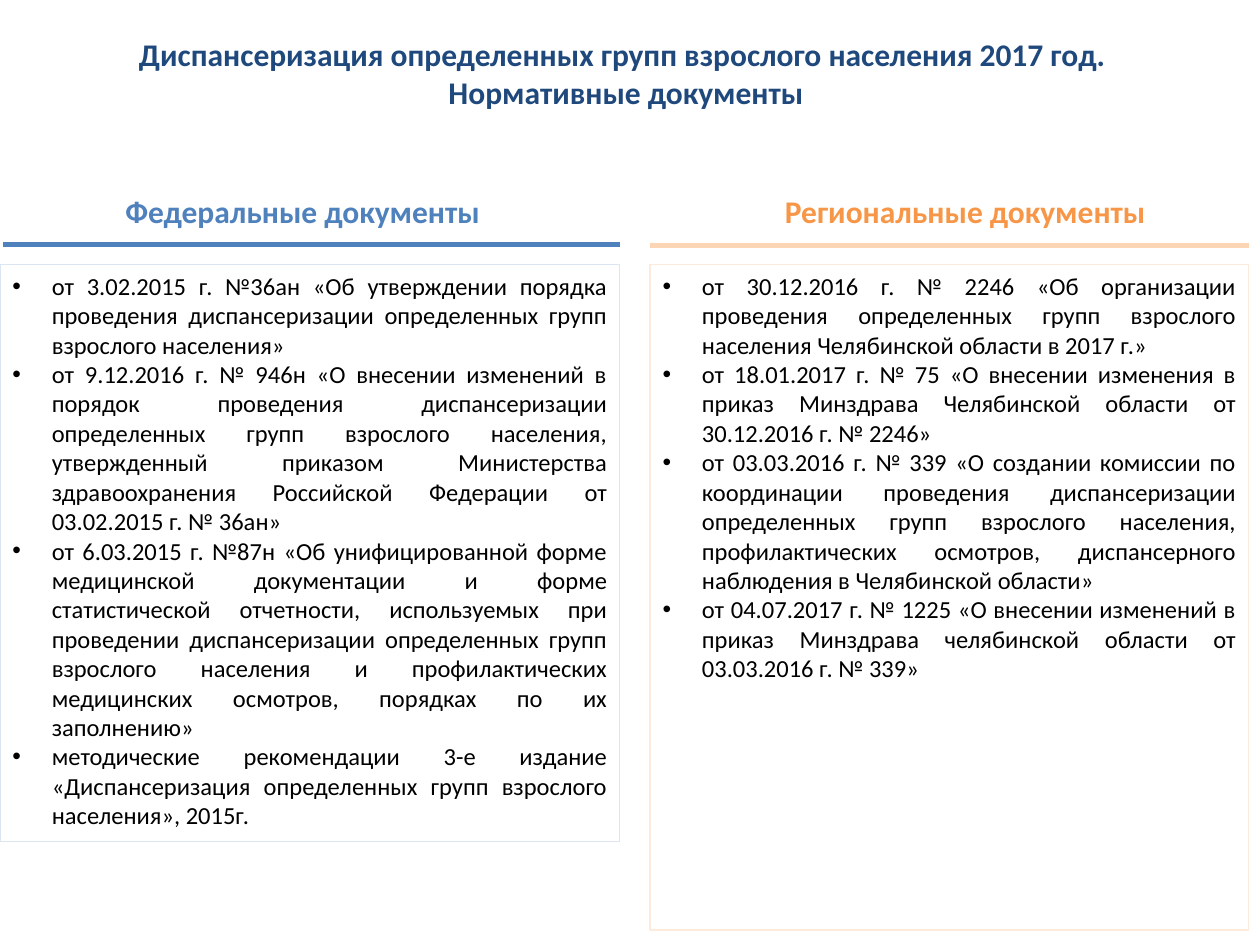
"""Build the slide on the legal documents for adult health check-ups."""
from lxml.etree import SubElement
from pptx import Presentation
from pptx.dml.color import RGBColor
from pptx.enum.shapes import MSO_CONNECTOR as Line, MSO_SHAPE as Shape
from pptx.enum.text import MSO_ANCHOR as Anchor, MSO_AUTO_SIZE as Fit, PP_ALIGN as Align
from pptx.oxml.ns import qn
from pptx.util import Pt

NAVY = RGBColor(0x1F, 0x49, 0x7D)
BLUE = RGBColor(0x4F, 0x81, 0xBD)
PALE_BLUE = RGBColor(0xDC, 0xE6, 0xF2)
ORANGE = RGBColor(0xF7, 0x96, 0x46)
PEACH = RGBColor(0xFC, 0xD5, 0xB5)
PALE_PEACH = RGBColor(0xFD, 0xEA, 0xDA)
BLACK = RGBColor(0, 0, 0)

TITLE = [
    "Диспансеризация определенных групп взрослого населения 2017 год. ",
    "Нормативные документы",
]
COLUMNS = [
    {
        "head": "Федеральные документы", "color": BLUE, "rule": BLUE, "edge": PALE_BLUE,
        "head_x": 62, "rule_x": 2, "rule_y": 139.7, "left": 0, "right": 354.2, "high": 329.8,
        "items": [
            "от 3.02.2015 г. №36ан «Об утверждении порядка проведения диспансеризации "
            "определенных групп взрослого населения»",
            "от 9.12.2016 г. № 946н «О внесении изменений в порядок проведения "
            "диспансеризации определенных групп взрослого населения, утвержденный приказом "
            "Министерства здравоохранения Российской Федерации от 03.02.2015 г. № 36ан»",
            "от 6.03.2015 г. №87н «Об унифицированной форме медицинской документации и "
            "форме статистической отчетности, используемых при проведении диспансеризации "
            "определенных групп взрослого населения и профилактических медицинских "
            "осмотров, порядках по их заполнению»",
            "методические рекомендации 3-е издание «Диспансеризация определенных групп "
            "взрослого населения», 2015г.",
        ],
    },
    {
        "head": "Региональные документы", "color": ORANGE, "rule": PEACH, "edge": PALE_PEACH,
        "head_x": 440.6, "rule_x": 371.5, "rule_y": 140.4, "left": 371.5, "right": 713.5,
        "high": 380.2,
        "items": [
            "от 30.12.2016 г. № 2246 «Об организации проведения определенных групп "
            "взрослого населения Челябинской области в 2017 г.»",
            "от 18.01.2017 г. № 75 «О внесении изменения в приказ Минздрава Челябинской "
            "области от 30.12.2016 г. № 2246»",
            "от 03.03.2016 г. № 339 «О создании комиссии по координации проведения "
            "диспансеризации определенных групп взрослого населения, профилактических "
            "осмотров, диспансерного наблюдения в Челябинской области»",
            "от 04.07.2017 г. № 1225 «О внесении изменений в приказ Минздрава челябинской "
            "области от 03.03.2016 г. № 339»",
        ],
    },
]
BOX_TOP = 151.2
INDENT = 22.5


def write(frame, lines, size, color, bold, align):
    frame.word_wrap = True
    frame.vertical_anchor = Anchor.TOP
    for i, line in enumerate(lines):
        para = frame.paragraphs[0] if i == 0 else frame.add_paragraph()
        para.alignment = align
        run = para.add_run()
        run.text = line
        font = run.font
        font.name, font.size, font.bold = "Calibri", Pt(size), bold
        font.color.rgb = color


def add_head(slide, lines, color, x, y, wide, high):
    box = slide.shapes.add_textbox(Pt(x), Pt(y), Pt(wide), Pt(high))
    write(box.text_frame, lines, 18, color, True, Align.CENTER)
    box.text_frame.auto_size = Fit.SHAPE_TO_FIT_TEXT


def add_rule(slide, col):
    y = Pt(col["rule_y"])
    rule = slide.shapes.add_connector(
        Line.STRAIGHT, Pt(col["rule_x"]), y, Pt(col["right"]), y)
    rule.line.color.rgb = col["rule"]
    rule.line.width = Pt(3)
    SubElement(rule._element.spPr, qn("a:effectLst"))


def add_list(slide, col):
    box = slide.shapes.add_shape(
        Shape.RECTANGLE, Pt(col["left"]), Pt(BOX_TOP),
        Pt(col["right"] - col["left"]), Pt(col["high"]))
    box.shadow.inherit = False
    box.fill.background()
    box.line.color.rgb = col["edge"]
    box.line.width = Pt(0.75)
    write(box.text_frame, col["items"], 14, BLACK, False, Align.JUSTIFY)
    for para in box.text_frame.paragraphs:
        props = para._p.get_or_add_pPr()
        props.set("marL", str(Pt(INDENT)))
        props.set("indent", str(Pt(-INDENT)))
        SubElement(props, qn("a:buFont"), typeface="Arial")
        SubElement(props, qn("a:buChar"), char="•")


def main():
    deck = Presentation()
    deck.slide_width, deck.slide_height = Pt(720), Pt(540)
    slide = deck.slides.add_slide(deck.slide_layouts[6])
    add_head(slide, TITLE, NAVY, 2, 16.6, 711.5, 50.9)
    for col in COLUMNS:
        add_head(slide, [col["head"]], col["color"], col["head_x"], 106, 222, 29)
        add_rule(slide, col)
        add_list(slide, col)
    deck.save("out.pptx")


if __name__ == "__main__":
    main()
